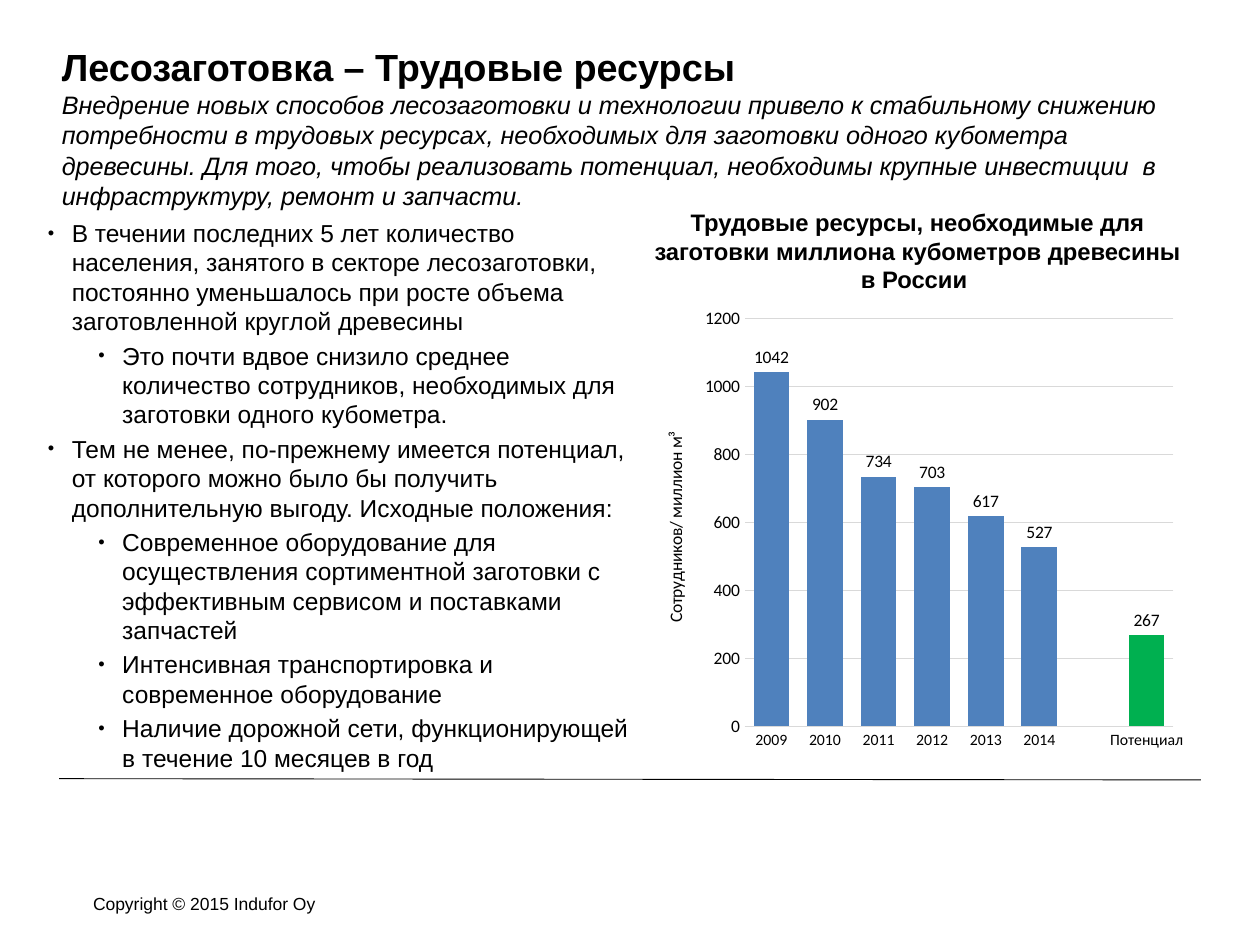
from lxml import etree
from pptx import Presentation
from pptx.chart.data import CategoryChartData
from pptx.dml.color import RGBColor
from pptx.enum.chart import XL_CHART_TYPE, XL_LABEL_POSITION, XL_TICK_MARK
from pptx.enum.shapes import MSO_CONNECTOR
from pptx.enum.text import MSO_ANCHOR, MSO_AUTO_SIZE, PP_ALIGN
from pptx.oxml import parse_xml
from pptx.oxml.ns import nsdecls, qn
from pptx.util import Inches, Pt

COLORS = {"text": "000000", "bar": "4F81BD", "potential": "00B050", "grid": "D9D9D9"}

TITLE = "Лесозаготовка – Трудовые ресурсы"
SUBTITLE = (
    "Внедрение новых способов лесозаготовки и технологии привело к стабильному "
    "снижению потребности в трудовых ресурсах, необходимых для заготовки одного "
    "кубометра древесины. Для того, чтобы реализовать потенциал, необходимы крупные "
    "инвестиции  в инфраструктуру, ремонт и запчасти."
)
CHART_HEADING = "Трудовые ресурсы, необходимые для заготовки миллиона кубометров древесины в России "
BULLETS = [
    (0, "В течении последних 5 лет количество населения, занятого в секторе "
        "лесозаготовки, постоянно уменьшалось при росте объема заготовленной круглой древесины"),
    (1, "Это почти вдвое снизило среднее  количество сотрудников, необходимых для "
        "заготовки одного кубометра."),
    (0, "Тем не менее, по-прежнему имеется потенциал, от которого можно было бы "
        "получить дополнительную выгоду. Исходные положения:"),
    (1, "Современное оборудование для осуществления сортиментной заготовки с "
        "эффективным сервисом и поставками запчастей"),
    (1, "Интенсивная транспортировка и современное оборудование"),
    (1, "Наличие дорожной сети, функционирующей в течение 10 месяцев в год"),
]
WORKFORCE = {
    "2009": 1042, "2010": 902, "2011": 734, "2012": 703,
    "2013": 617, "2014": 527, "": None, "Потенциал": 267,
}


def rgb(name):
    return RGBColor.from_string(COLORS[name])


def style_font(font, size, name="Arial", bold=False, italic=False):
    font.name = name
    font.size = Pt(size)
    font.bold = bold
    font.italic = italic
    font.color.rgb = rgb("text")


def place(shape, box, anchor=MSO_ANCHOR.TOP):
    shape.left, shape.top, shape.width, shape.height = map(Inches, box)
    frame = shape.text_frame
    frame.word_wrap = True
    frame.auto_size = MSO_AUTO_SIZE.NONE
    frame.vertical_anchor = anchor
    return frame


def add_bullet(paragraph, indent):
    properties = paragraph._p.get_or_add_pPr()
    properties.set("marL", str(Inches(indent)))
    properties.set("indent", str(Inches(-0.19)))
    for tag, attribute, value in (
        ("a:buSzPct", "val", "75000"), ("a:buFont", "typeface", "Arial"), ("a:buChar", "char", "•"),
    ):
        etree.SubElement(properties, qn(tag)).set(attribute, value)


def fill_title(shape, box):
    paragraph = place(shape, box).paragraphs[0]
    paragraph.alignment = PP_ALIGN.LEFT
    heading = paragraph.add_run()
    heading.text = TITLE
    style_font(heading.font, 21.6, bold=True)
    paragraph.add_line_break()
    subtitle = paragraph.add_run()
    subtitle.text = SUBTITLE
    style_font(subtitle.font, 14.4, italic=True)


def fill_chart_heading(shape, box):
    paragraph = place(shape, box, MSO_ANCHOR.BOTTOM).paragraphs[0]
    paragraph.text = CHART_HEADING
    paragraph.alignment = PP_ALIGN.CENTER
    paragraph.space_before = Pt(0)
    style_font(paragraph.font, 13.6, bold=True)


def fill_bullets(shape, box):
    frame = place(shape, box)
    for index, (level, text) in enumerate(BULLETS):
        paragraph = frame.add_paragraph() if index else frame.paragraphs[0]
        paragraph.text = text
        paragraph.level = level
        add_bullet(paragraph, 0.19 + 0.4 * level)
        paragraph.space_before = Pt(2.8 if index else 0)
        style_font(paragraph.font, 14)


def manual_layout(**values):
    settings = "".join(f'<c:{key} val="{value}"/>' for key, value in values.items())
    return parse_xml(
        f'<c:layout {nsdecls("c")}><c:manualLayout>{settings}</c:manualLayout></c:layout>'
    )


def set_layout(parent, layout, position):
    for old in parent.findall(qn("c:layout")):
        parent.remove(old)
    parent.insert(position, layout)


def format_axes(chart):
    category_axis, value_axis = chart.category_axis, chart.value_axis
    for axis, size in ((category_axis, 9), (value_axis, 10)):
        axis.major_tick_mark = axis.minor_tick_mark = XL_TICK_MARK.NONE
        style_font(axis.tick_labels.font, size, "Calibri")
    value_axis.minimum_scale, value_axis.maximum_scale, value_axis.major_unit = 0, 1200, 200
    value_axis.format.line.fill.background()
    for line in (category_axis.format.line, value_axis.major_gridlines.format.line):
        line.color.rgb = rgb("grid")
        line.width = Pt(0.75)
    title = value_axis.axis_title
    paragraph = title.text_frame.paragraphs[0]
    paragraph.text = "Сотрудников/ миллион м³"
    style_font(paragraph.font, 10, "Calibri")
    set_layout(title._element, manual_layout(xMode="edge", yMode="edge", x=0.04, y=0.28), 1)


def add_workforce_chart(slide, box):
    data = CategoryChartData()
    data.categories = list(WORKFORCE)
    data.add_series("Series 1", list(WORKFORCE.values()))
    chart = slide.shapes.add_chart(
        XL_CHART_TYPE.COLUMN_CLUSTERED, *map(Inches, box), data
    ).chart
    chart.has_legend = False
    chart.has_title = False
    style_font(chart.font, 10, "Calibri")
    format_axes(chart)
    plot = chart.plots[0]
    plot.gap_width, plot.overlap, plot.vary_by_categories = 50, -27, False
    plot.has_data_labels = True
    labels = plot.data_labels
    labels.show_value = True
    labels.position = XL_LABEL_POSITION.OUTSIDE_END
    style_font(labels.font, 10, "Calibri")
    series = plot.series[0]
    for bar, color in ((series, "bar"), (series.points[len(WORKFORCE) - 1], "potential")):
        bar.format.fill.solid()
        bar.format.fill.fore_color.rgb = rgb(color)
    plot_layout = manual_layout(
        layoutTarget="inner", xMode="edge", yMode="edge", x=0.19, y=0.04, w=0.77, h=0.89
    )
    set_layout(chart._chartSpace.chart.plotArea, plot_layout, 0)


def add_footer(slide, rule, box):
    line = slide.shapes.add_connector(MSO_CONNECTOR.STRAIGHT, *map(Inches, rule))
    line.line.color.rgb = rgb("text")
    line.line.width = Pt(0.5)
    etree.SubElement(line._element.spPr, qn("a:effectLst"))
    frame = place(slide.shapes.add_textbox(*map(Inches, box)), box, MSO_ANCHOR.MIDDLE)
    paragraph = frame.paragraphs[0]
    paragraph.text = "Copyright © 2015 Indufor Oy"
    style_font(paragraph.font, 10)


def main():
    presentation = Presentation()
    presentation.slide_width, presentation.slide_height = Inches(10), Inches(7.5)
    slide = presentation.slides.add_slide(presentation.slide_layouts[4])
    holders = {holder.placeholder_format.idx: holder for holder in slide.placeholders}
    for unused in (3, 4):
        element = holders[unused]._element
        element.getparent().remove(element)

    column_left, column_width, body_top, heading_height = 5.07, 4.42, 1.68, 0.7
    fill_title(slide.shapes.title, (0.39, 0.3, 9, 1.38))
    fill_chart_heading(holders[1], (column_left, body_top, column_width, heading_height))
    fill_bullets(holders[2], (0.28, body_top, 4.96, 4.48))
    add_workforce_chart(slide, (column_left, body_top + heading_height, column_width, 3.64))
    add_footer(slide, (0.47, 6.18, 9.53, 6.19), (0.64, 6.99, 3.17, 0.36))
    presentation.save("out.pptx")


if __name__ == "__main__":
    main()
